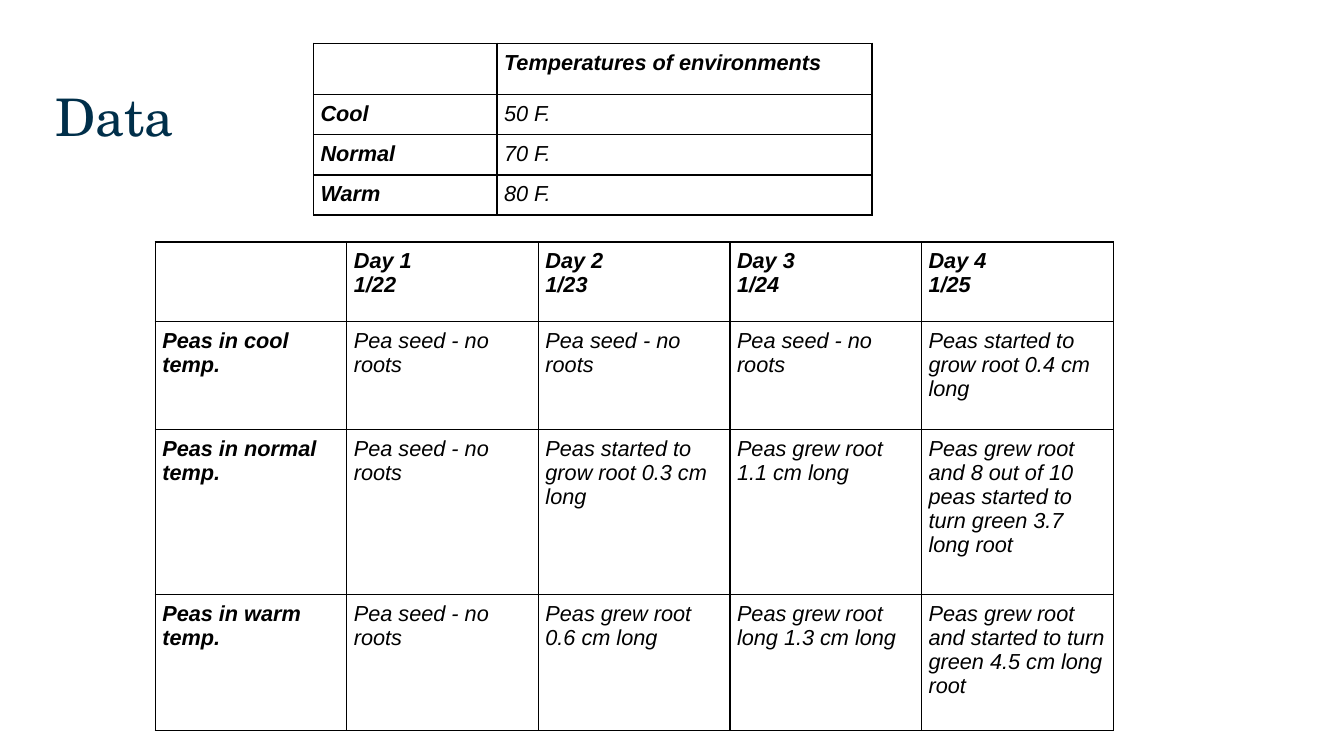
from pptx import Presentation
from pptx import util as u
from pptx.dml.color import RGBColor
from pptx.enum import text
from pptx.oxml import parse_xml
from pptx.oxml.ns import nsdecls

BLACK = RGBColor(0x00, 0x00, 0x00)
NAVY = RGBColor(0x00, 0x2F, 0x4A)

HEAD = {"name": "TeX Gyre Schola", "size": u.Pt(37)}
BODY = {"name": "Arial", "size": u.Pt(15.5), "italic": True}
PAD = u.Inches(0.07)
CELL = {"margin_left": PAD, "margin_right": PAD, "margin_top": PAD,
        "margin_bottom": PAD, "vertical_anchor": text.MSO_ANCHOR.TOP}

TEMPS = [
    ["", "Temperatures of environments"],
    ["Cool", "50 F."],
    ["Normal", "70 F."],
    ["Warm", "80 F."],
]
SEED = "Pea seed - no roots"
PEAS = [
    ["", "Day 1\n1/22", "Day 2\n1/23", "Day 3\n1/24", "Day 4\n1/25"],
    ["Peas in cool temp.", SEED, SEED, SEED,
     "Peas started to grow root 0.4 cm long"],
    ["Peas in normal temp.", SEED, "Peas started to grow root 0.3 cm long",
     "Peas grew root 1.1 cm long",
     "Peas grew root and 8 out of 10 peas started to turn green 3.7 long root"],
    ["Peas in warm temp.", SEED, "Peas grew root 0.6 cm long",
     "Peas grew root long 1.3 cm long",
     "Peas grew root and started to turn green 4.5 cm long root"],
]


def apply(obj, vals):
    for key, val in vals.items():
        setattr(obj, key, val)


def write(frame, words, vals, color):
    frame.text = words
    for para in frame.paragraphs:
        apply(para.font, vals)
        para.font.color.rgb = color
        for run in para.runs:
            apply(run.font, vals)
            run.font.color.rgb = color


def border(cell):
    # Borders come before the fill in the cell properties
    props = cell._tc.get_or_add_tcPr()
    for spot, side in enumerate(("lnL", "lnR", "lnT", "lnB")):
        props.insert(spot, parse_xml(
            f'<a:{side} {nsdecls("a")} w="{u.Pt(1)}"><a:solidFill>'
            f'<a:srgbClr val="{BLACK}"/></a:solidFill></a:{side}>'))


def add_title(slide, words):
    box = slide.shapes.add_textbox(
        u.Inches(0.45), u.Inches(0.79), u.Inches(12.42), u.Inches(1.87))
    box.text_frame.word_wrap = True
    write(box.text_frame, words, HEAD, NAVY)


def add_grid(slide, left, top, cols, rows, data):
    grid = slide.shapes.add_table(
        len(rows), len(cols), u.Inches(left), u.Inches(top),
        u.Inches(sum(cols)), u.Inches(sum(rows))).table
    apply(grid, {"first_row": False, "horz_banding": False})
    for col, width in zip(grid.columns, cols):
        col.width = u.Inches(width)
    for row, height in zip(grid.rows, rows):
        row.height = u.Inches(height)
    for r, line in enumerate(data):
        for c, words in enumerate(line):
            cell = grid.cell(r, c)
            apply(cell, CELL)
            cell.fill.background()
            border(cell)
            bold = r == 0 or c == 0
            write(cell.text_frame, words, {**BODY, "bold": bold}, BLACK)


def main():
    deck = Presentation()
    deck.slide_width, deck.slide_height = u.Inches(13.33), u.Inches(7.5)
    slide = deck.slides.add_slide(deck.slide_layouts[6])

    add_title(slide, "Data")
    # Room temperatures
    add_grid(slide, 3.11, 0.43, [1.82, 3.72], [0.51] + [0.39] * 3, TEMPS)
    # Growth by day
    add_grid(slide, 1.54, 2.4, [1.9] * 5, [0.79, 1.07, 1.64, 1.35], PEAS)

    deck.save("out.pptx")


if __name__ == "__main__":
    main()
